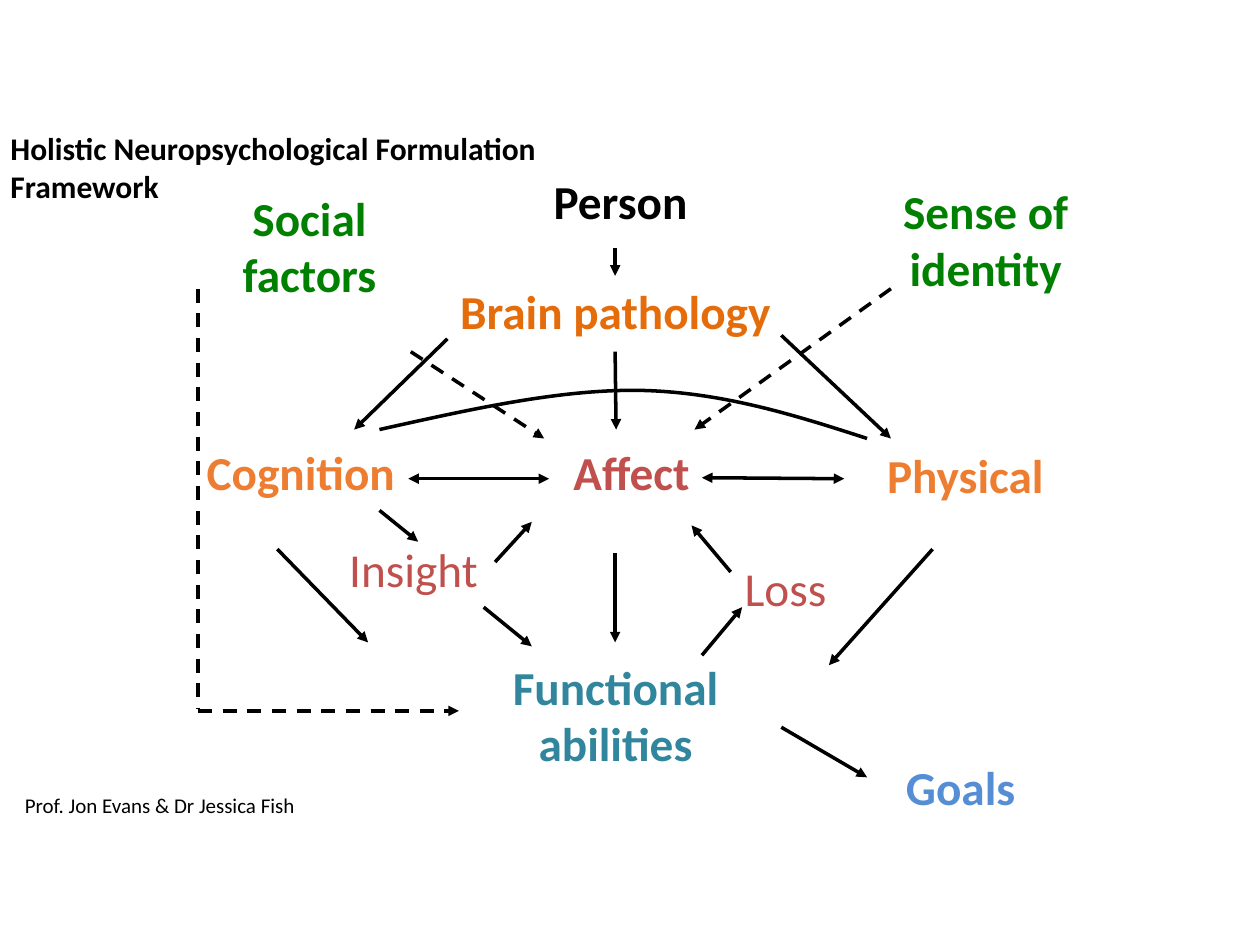
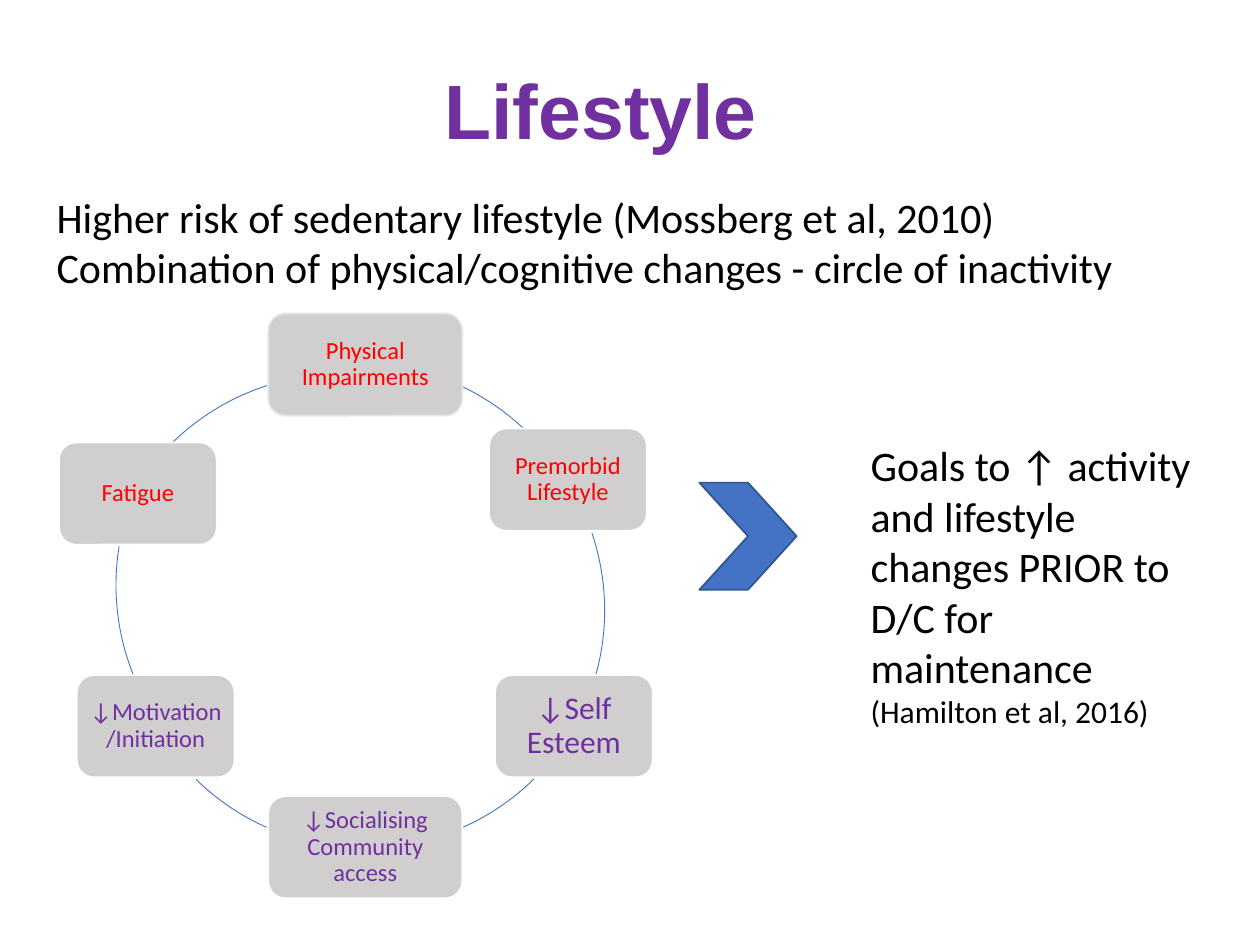
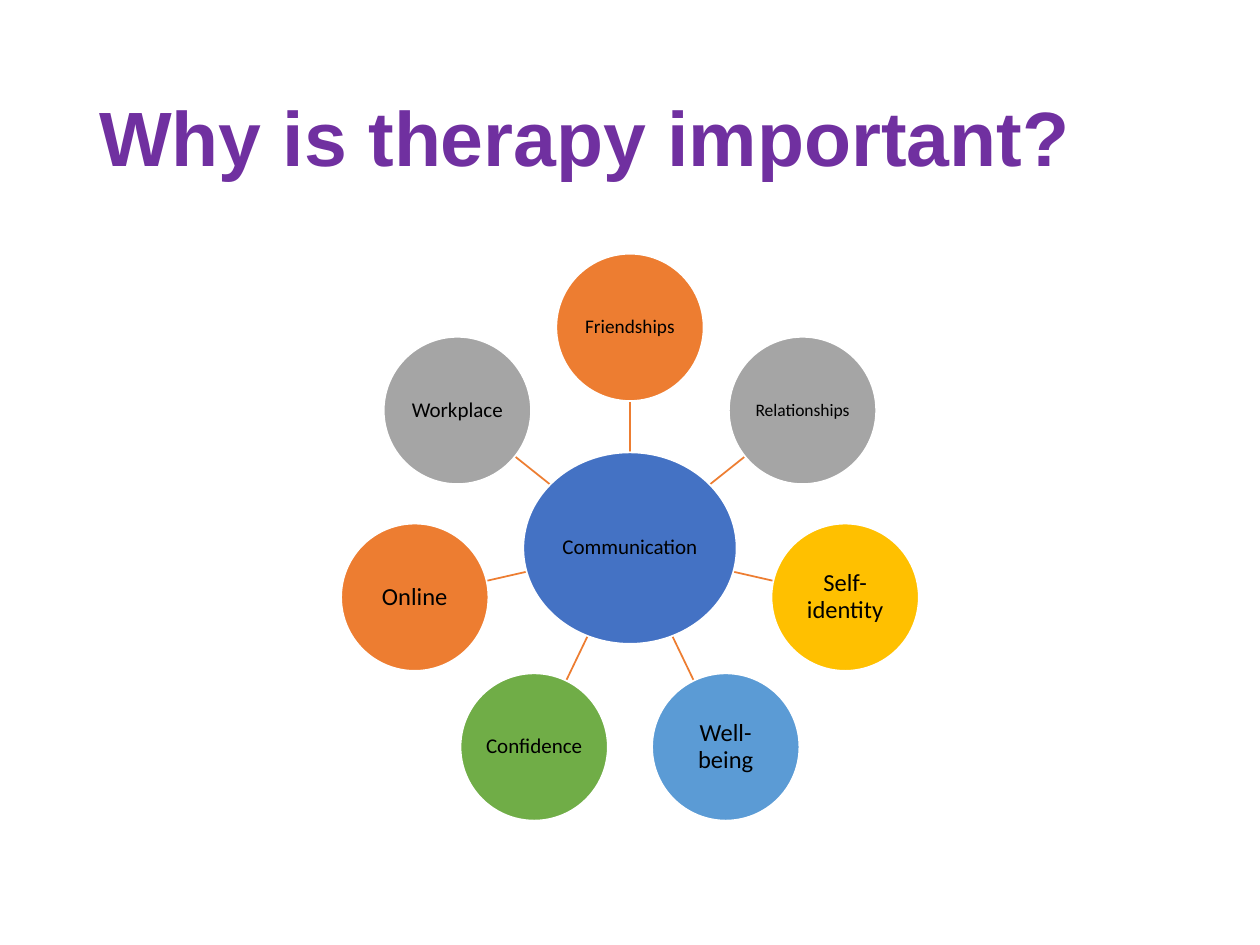
from math import cos, hypot, pi, sin

from lxml.etree import SubElement
from pptx import Presentation
from pptx.dml.color import RGBColor as Rgb
from pptx.enum.dml import MSO_LINE as Dash
from pptx.enum.shapes import MSO_CONNECTOR as Link, MSO_SHAPE as Form
from pptx.enum.text import MSO_ANCHOR as Anchor, MSO_AUTO_SIZE as Auto, PP_ALIGN as Align
from pptx.oxml.ns import qn
from pptx.util import Cm, Pt

HUES = {
    "black": "000000", "white": "FFFFFF", "purple": "7030A0", "red": "FF0000",
    "rust": "E46C0A", "orange": "ED7D31", "brick": "C0504D", "teal": "31859C",
    "green": "008000", "sky": "558ED5", "blue": "4472C4", "navy": "325491",
    "silver": "D0CECE", "pale": "E7E6E6", "grey": "A5A5A5", "gold": "FFC000",
    "azure": "5B9BD5", "leaf": "70AD47",
}
HUES = {name: Rgb.from_string(code) for name, code in HUES.items()}


def write(shape, text, size, hue="black", bold=False, align=Align.LEFT,
          pad=(0.25, 0.13), anchor=Anchor.TOP, space=1.0, face="Calibri"):
    """Fill a shape with evenly styled text, one paragraph per line."""
    frame = shape.text_frame
    frame.text = text
    frame.word_wrap = True
    frame.auto_size = Auto.NONE
    frame.vertical_anchor = anchor
    frame.margin_left = frame.margin_right = Cm(pad[0])
    frame.margin_top = frame.margin_bottom = Cm(pad[1])
    for para in frame.paragraphs:
        para.alignment = align
        para.line_spacing = space
        font = para.font
        font.name, font.size, font.bold = face, Pt(size), bold
        font.color.rgb = HUES[hue]


def join(slide, ends, hue, width, tips=(), dash=False):
    """Draw a straight line with the given arrow tips."""
    line = slide.shapes.add_connector(Link.STRAIGHT, *[Cm(v) for v in ends])
    line.line.color.rgb = HUES[hue]
    line.line.width = Pt(width)
    if dash:
        line.line.dash_style = Dash.DASH
    props = line._element.spPr
    for tip in tips:
        SubElement(props.find(qn("a:ln")), qn("a:" + tip), type="triangle")
    SubElement(props, qn("a:effectLst"))


deck = Presentation()
deck.slide_width, deck.slide_height = Cm(25.4), Cm(19.05)

# Titles shared by all slides
head = dict(size=44, hue="purple", bold=True, face="Arial", anchor=Anchor.MIDDLE, space=0.9)
tight = (0.18, 0.1)
slides = []
for text, place, look in [
    ("Holistic Neuropsychological Formulation Framework", (0.03, 2.51, 11.1, 1.73),
     dict(size=18, bold=True, pad=tight)),
    ("Lifestyle", (0.71, 0.91, 22.81, 2.79), dict(head, align=Align.CENTER)),
    ("Why is therapy important?", (1.75, 1.02, 21.89, 3.68), head),
]:
    slide = deck.slides.add_slide(deck.slide_layouts[5])
    title = slide.shapes.title
    title.left, title.top, title.width, title.height = [Cm(v) for v in place]
    write(title, text, **look)
    slides.append(slide)
frame_map, cycle, wheel = slides

# Framework: labels
for text, hue, place in [
    ("Brain pathology", "rust", (8.71, 5.59, 7.39, 1.35)),
    ("Cognition", "orange", (3.84, 8.84, 4.45, 1.35)),
    ("Affect", "brick", (10.34, 8.84, 4.78, 3.66)),
    ("Physical", "orange", (17.48, 8.89, 3.96, 1.35)),
    ("Functional abilities", "teal", (9.55, 13.16, 5.72, 2.51)),
    ("Loss", "brick", (14.83, 11.18, 2.03, 1.35)),
    ("Insight", "brick", (6.86, 10.8, 3, 1.35)),
    ("Sense of identity", "green", (17.48, 3.58, 4.78, 3.66)),
    ("Social factors", "green", (3.99, 3.71, 4.5, 2.51)),
    ("Goals", "sky", (16.1, 15.19, 6.53, 1.35)),
    ("Person", "black", (8.28, 3.38, 8.46, 1.35)),
]:
    label = frame_map.shapes.add_textbox(*[Cm(v) for v in place])
    minor = text in ("Loss", "Insight")
    write(label, text, 27, hue, bold=not minor, pad=tight,
          align=Align.LEFT if minor else Align.CENTER)
credit = frame_map.shapes.add_textbox(Cm(0.25), Cm(15.85), Cm(15.47), Cm(0.76))
write(credit, "Prof. Jon Evans & Dr Jessica Fish", 12)

# Framework: arrows, grouped by kind
one, both = ["tailEnd"], ["headEnd", "tailEnd"]
for tips, dash, links in [
    (both, False, [(8.23, 9.65, 11.07, 9.65), (14.15, 9.63, 17.02, 9.65)]),
    (one, False, [
        (12.4, 5, 12.4, 5.56), (12.4, 7.09, 12.42, 8.66), (12.4, 11.15, 12.4, 12.95),
        (9.02, 6.83, 7.14, 8.66), (15.75, 6.76, 17.96, 8.84),
        (5.59, 11.07, 7.42, 12.95), (18.8, 11.07, 16.71, 13.41),
        (14.15, 13.21, 14.96, 12.24), (14.73, 11.53, 13.94, 10.59),
        (9.75, 12.24, 10.72, 13.03), (9.98, 11.33, 10.72, 10.52),
        (7.65, 10.29, 8.43, 10.92), (15.75, 14.66, 17.48, 15.67)]),
    (one, True, [(17.96, 5.82, 14, 8.66), (8.28, 7.09, 10.97, 8.84),
                 (3.99, 14.33, 9.25, 14.33)]),
    ([], True, [(3.99, 5.82, 3.99, 14.3)]),
]:
    for ends in links:
        join(frame_map, ends, "black", 2, tips, dash)

# Framework: curve from Cognition to Physical, two Bezier pieces
knots = [(9.45, 8.26), (11.25, 7.85), (12.88, 7.87), (14.53, 7.9), (16, 8.36), (17.48, 8.84)]
pen = frame_map.shapes.build_freeform(Cm(7.65), Cm(8.66))
pen.add_line_segments([(Cm(x), Cm(y)) for x, y in knots], close=False)
curve = pen.convert_to_shape()
curve.shadow.inherit = False
curve.fill.background()
curve.line.color.rgb = HUES["black"]
curve.line.width = Pt(2)
trace = curve._element.xpath(".//a:path")[0]
steps = trace.findall(qn("a:lnTo"))
for start in (0, 3):
    bend = SubElement(trace, qn("a:cubicBezTo"))
    for step in steps[start:start + 3]:
        bend.append(step[0])
        trace.remove(step)

# Lifestyle: circle of arcs, angles in degrees clockwise from the right
for x, y, start, end in [
    (2.36, 7.32, 295.4, 313.3), (2.46, 7.44, 341.3, 15.3), (2.49, 7.37, 45.6, 66),
    (2.49, 7.37, 114, 134.4), (2.34, 6.93, 158.3, 189.2), (2.01, 7.54, 225.8, 252.2),
]:
    arc = cycle.shapes.add_shape(Form.ARC, Cm(x), Cm(y), Cm(9.73), Cm(9.73))
    arc.adjustments[0], arc.adjustments[1] = start * 0.6, end * 0.6
    arc.shadow.inherit = False
    arc.fill.background()
    arc.line.color.rgb = HUES["blue"]
    arc.line.width = Pt(0.5)

# Lifestyle: boxes on the circle
for text, x, y, width, size, hue, edge in [
    ("Physical Impairments", 5.41, 6.32, 3.91, 14, "red", "pale"),
    ("Premorbid Lifestyle", 9.86, 8.64, 3.18, 14, "red", "white"),
    ("↓Self Esteem", 9.98, 13.61, 3.18, 18, "purple", "white"),
    ("↓Socialising Community access", 5.41, 16.05, 3.91, 14, "purple", "white"),
    ("↓Motivation/Initiation", 1.55, 13.61, 3.18, 14, "purple", "white"),
    ("Fatigue", 1.19, 8.92, 3.18, 14, "red", "white"),
]:
    box = cycle.shapes.add_shape(Form.ROUNDED_RECTANGLE, Cm(x), Cm(y), Cm(width), Cm(2.06))
    box.shadow.inherit = False
    box.fill.solid()
    box.fill.fore_color.rgb = HUES["silver"]
    box.line.color.rgb = HUES[edge]
    box.line.width = Pt(1)
    write(box, text, size, hue, align=Align.CENTER, pad=(0.15, 0.15),
          anchor=Anchor.MIDDLE, space=0.9)

# Lifestyle: chevron and texts
mark = cycle.shapes.add_shape(Form.CHEVRON, Cm(14.1), Cm(9.73), Cm(1.96), Cm(2.16))
mark.shadow.inherit = False
mark.fill.solid()
mark.fill.fore_color.rgb = HUES["blue"]
mark.line.color.rgb = HUES["navy"]
mark.line.width = Pt(1)
goals = cycle.shapes.add_textbox(Cm(17.3), Cm(8.74), Cm(7.19), Cm(6.15))
write(goals, "Goals to ↑ activity and lifestyle changes PRIOR to D/C for maintenance ", 24)
cite = goals.text_frame.paragraphs[0].add_run()
cite.text = "(Hamilton et al, 2016)"
cite.font.size = Pt(18)
intro = cycle.shapes.add_textbox(Cm(0.89), Cm(3.73), Cm(24.51), Cm(2.31))
write(intro, "Higher risk of sedentary lifestyle (Mossberg et al, 2010)\n"
      "Combination of physical/cognitive changes - circle of inactivity", 24)

# Therapy: hub, then spokes and discs at equal angles from the top
mid_x, mid_y, hub_w, hub_h, ring, disc = 12.7, 11.05, 4.3, 3.86, 4.45, 2.97
discs = [("Communication", 12, "blue", mid_x, mid_y, hub_w, hub_h)]
parts = [
    ("Friendships", 11, "orange"), ("Relationships", 10, "grey"), ("Self- identity", 14, "gold"),
    ("Well-being", 14, "azure"), ("Confidence", 12, "leaf"), ("Online", 14, "orange"),
    ("Workplace", 12, "grey"),
]
for i, part in enumerate(parts):
    turn = 2 * pi * i / len(parts)
    dx, dy = sin(turn), -cos(turn)
    near = 1 / hypot(dx / (hub_w / 2), dy / (hub_h / 2))
    far = ring - disc / 2
    join(wheel, (mid_x + near * dx, mid_y + near * dy, mid_x + far * dx, mid_y + far * dy),
         "orange", 1)
    discs.append((*part, mid_x + ring * dx, mid_y + ring * dy, disc, disc))
for text, size, hue, x, y, width, height in discs:
    oval = wheel.shapes.add_shape(Form.OVAL, Cm(x - width / 2), Cm(y - height / 2),
                                  Cm(width), Cm(height))
    oval.shadow.inherit = False
    oval.fill.solid()
    oval.fill.fore_color.rgb = HUES[hue]
    oval.line.color.rgb = HUES["white"]
    oval.line.width = Pt(1)
    write(oval, text, size, align=Align.CENTER, pad=(0.03, 0.03),
          anchor=Anchor.MIDDLE, space=0.9)

deck.save("out.pptx")
